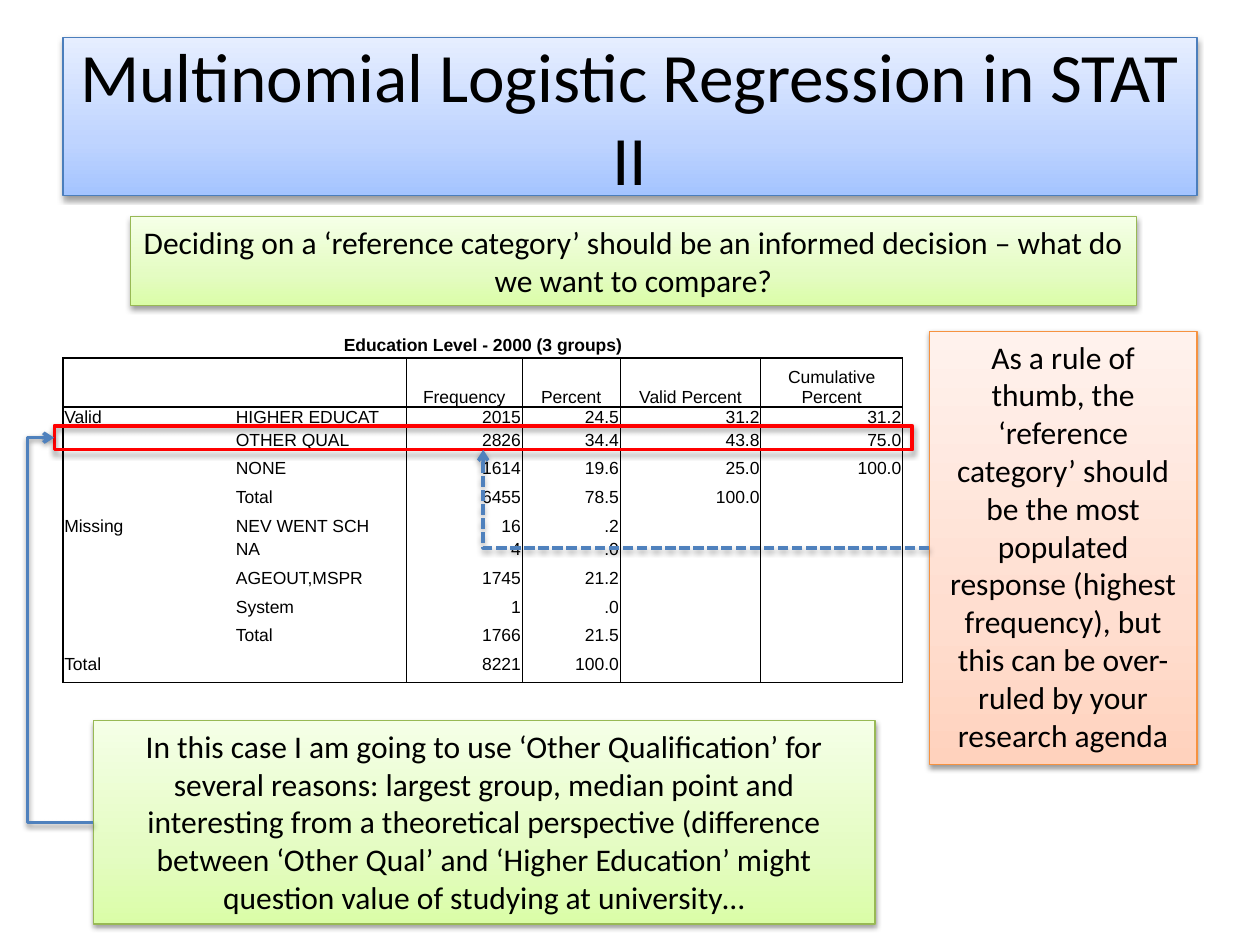
from copy import deepcopy

from lxml.etree import SubElement
from pptx import Presentation
from pptx.dml.color import RGBColor
from pptx.enum.dml import MSO_LINE
from pptx.enum.shapes import MSO_CONNECTOR, MSO_SHAPE
from pptx.enum.text import MSO_ANCHOR, PP_ALIGN
from pptx.oxml.ns import qn
from pptx.util import Pt

BLUE = ("A4C4FF", "BFD4FF", "E6EEFF", "4B7EBC")
GREEN = ("DAFDA7", "E4FCC2", "F5FFE7", "98B955")
ORANGE = ("FFD2BD", "FFDED0", "FFF2ED", "F69240")
STOPS = (0, 0.35, 1)

# text, (left, top, width, height), palette, font size, anchor
BOXES = [
    ("Multinomial Logistic Regression in STAT II",
     (36, 21.6, 648, 90), BLUE, 39.6, MSO_ANCHOR.MIDDLE),
    ("Deciding on a ‘reference category’ should be an informed decision – "
     "what do we want to compare?",
     (74.6, 123.9, 574.8, 50.9), GREEN, 18, MSO_ANCHOR.TOP),
    ("As a rule of thumb, the ‘reference category’ should be the most populated "
     "response (highest frequency), but this can be over-ruled by your research agenda",
     (531, 189.4, 153, 247.4), ORANGE, 18, MSO_ANCHOR.TOP),
    ("In this case I am going to use ‘Other Qualification’ for several reasons: "
     "largest group, median point and interesting from a theoretical perspective "
     "(difference between ‘Other Qual’ and ‘Higher Education’ might question value "
     "of studying at university…",
     (53.3, 411.8, 446.7, 116.3), GREEN, 18, MSO_ANCHOR.TOP),
]

ROWS = [
    ("Education Level - 2000 (3 groups)", "", "", "", "", ""),
    ("", "", "Frequency", "Percent", "Valid Percent", "Cumulative Percent"),
    ("Valid", "HIGHER EDUCAT", "2015", "24.5", "31.2", "31.2"),
    ("", "OTHER QUAL", "2826", "34.4", "43.8", "75.0"),
    ("", "NONE", "1614", "19.6", "25.0", "100.0"),
    ("", "Total", "6455", "78.5", "100.0", ""),
    ("Missing", "NEV WENT SCH", "16", ".2", "", ""),
    ("", "NA", "4", ".0", "", ""),
    ("", "AGEOUT,MSPR", "1745", "21.2", "", ""),
    ("", "System", "1", ".0", "", ""),
    ("", "Total", "1766", "21.5", "", ""),
    ("Total", "", "8221", "100.0", "", ""),
]
COL_WIDTHS = (98.1, 98.1, 66.2, 56, 80.4, 81)
TITLE_ROW, HEADER_ROW, LAST_ROW = 0, 1, len(ROWS) - 1
TITLE_HEIGHT, HEADER_HEIGHT, TIGHT_HEIGHT, ROW_HEIGHT = 15.1, 28, 12.7, 16.5
TIGHT_ROWS = (2, 6)
MERGES = [((0, 0), (0, 5)), ((1, 0), (1, 1)), ((2, 0), (5, 0)),
          ((6, 0), (10, 0)), ((11, 0), (11, 1))]
TABLE_LEFT, TABLE_TOP = 36, 189.4
HIGHLIGHT = (31, 243.3, 490.3, 13.7)


def rgb(color):
    return RGBColor.from_string(color)


def add_shadow(shape, blur=3.15, dist=1.57, alpha=38):
    """Drop a black shadow straight down; call after fill and line are set."""
    effects = SubElement(shape._element.spPr, qn("a:effectLst"))
    outer = SubElement(effects, qn("a:outerShdw"), blurRad=str(Pt(blur)),
                       dist=str(Pt(dist)), dir="5400000", rotWithShape="0")
    black = SubElement(outer, qn("a:srgbClr"), val="000000")
    SubElement(black, qn("a:alpha"), val=str(alpha * 1000))


def set_line(line, color, width):
    line.color.rgb = rgb(color)
    line.width = Pt(width)


def add_rect(shapes, box):
    return shapes.add_shape(MSO_SHAPE.RECTANGLE, *map(Pt, box))


def write(tf, text, align, **font):
    p = tf.paragraphs[0]
    p.alignment = align
    r = p.add_run()
    r.text = text
    r.font.color.rgb = rgb("000000")
    for name, value in font.items():
        setattr(r.font, name, value)


def add_box(shapes, text, box, palette, size, anchor):
    s = add_rect(shapes, box)
    s.fill.gradient()
    s.fill.gradient_angle = 90
    stops = s._element.spPr.find(".//" + qn("a:gsLst"))
    stops.append(deepcopy(stops[-1]))
    for stop, position, color in zip(s.fill.gradient_stops, STOPS, palette):
        stop.position = position
        stop.color.rgb = rgb(color)
    set_line(s.line, palette[-1], 0.75)
    add_shadow(s)
    s.text_frame.word_wrap = True
    s.text_frame.vertical_anchor = anchor
    write(s.text_frame, text, PP_ALIGN.CENTER, name="Calibri", size=Pt(size))
    return s


def row_height(row):
    special = {TITLE_ROW: TITLE_HEIGHT, HEADER_ROW: HEADER_HEIGHT}
    return special.get(row, TIGHT_HEIGHT if row in TIGHT_ROWS else ROW_HEIGHT)


def column_line(row, boundary):
    """Width of the vertical rule at a column boundary; 0 for none."""
    if row == TITLE_ROW or boundary == 1:
        return 0
    return 1 if boundary in (0, 2, len(COL_WIDTHS)) else 0.5


def row_line(boundary):
    return 1 if boundary in (HEADER_ROW, HEADER_ROW + 1, len(ROWS)) else 0


def set_borders(cell, row, col):
    widths = {"a:lnL": column_line(row, col), "a:lnR": column_line(row, col + 1),
              "a:lnT": row_line(row), "a:lnB": row_line(row + 1)}
    tc_pr = cell._tc.get_or_add_tcPr()
    for tag, width in widths.items():
        ln = SubElement(tc_pr, qn(tag), w=str(Pt(width)))
        if width:
            fill = SubElement(ln, qn("a:solidFill"))
            SubElement(fill, qn("a:srgbClr"), val="000000")
        else:
            SubElement(ln, qn("a:noFill"))


def fill_cell(cell, text, row, col):
    cell.margin_left = cell.margin_right = cell.margin_top = Pt(0.75)
    cell.margin_bottom = 0
    cell.vertical_anchor = {TITLE_ROW: MSO_ANCHOR.MIDDLE,
                            HEADER_ROW: MSO_ANCHOR.BOTTOM}.get(row, MSO_ANCHOR.TOP)
    align = PP_ALIGN.RIGHT if col > 1 else PP_ALIGN.LEFT
    if row <= HEADER_ROW:
        align = PP_ALIGN.CENTER
    if text:
        write(cell.text_frame, text, align, name="Arial", size=Pt(10),
              bold=row == TITLE_ROW)
    else:
        SubElement(cell.text_frame.paragraphs[0]._p, qn("a:endParaRPr"), sz="1000")
    set_borders(cell, row, col)
    cell.fill.background()


def add_frequency_table(shapes):
    heights = [row_height(i) for i in range(len(ROWS))]
    table = shapes.add_table(len(ROWS), len(COL_WIDTHS), Pt(TABLE_LEFT), Pt(TABLE_TOP),
                             Pt(sum(COL_WIDTHS)), Pt(sum(heights))).table
    table.first_row = table.horz_banding = False
    for column, width in zip(table.columns, COL_WIDTHS):
        column.width = Pt(width)
    for i, (values, height) in enumerate(zip(ROWS, heights)):
        table.rows[i].height = Pt(height)
        for j, text in enumerate(values):
            fill_cell(table.cell(i, j), text, i, j)
    for first, last in MERGES:
        table.cell(*first).merge(table.cell(*last))


def add_elbow(shapes, start, end, preset, dash=None, bend=None):
    c = shapes.add_connector(MSO_CONNECTOR.ELBOW, *map(Pt, start + end))
    set_line(c.line, "4F81BD", 2)
    c.line.dash_style = dash
    SubElement(c.line._get_or_add_ln(), qn("a:tailEnd"), type="arrow")
    geometry = c._element.spPr.find(qn("a:prstGeom"))
    geometry.set("prst", preset)
    if bend:
        SubElement(geometry.find(qn("a:avLst")), qn("a:gd"),
                   name="adj1", fmla=f"val {round(bend * 100000)}")
    add_shadow(c)


def main():
    prs = Presentation()
    prs.slide_width, prs.slide_height = Pt(720), Pt(540)
    shapes = prs.slides.add_slide(prs.slide_layouts[6]).shapes

    add_box(shapes, *BOXES[0])
    add_frequency_table(shapes)
    for box in BOXES[1:]:
        add_box(shapes, *box)

    highlight = add_rect(shapes, HIGHLIGHT)
    highlight.fill.background()
    set_line(highlight.line, "FF0000", 2)
    add_shadow(highlight, dist=1.8, alpha=35)

    left, top, width, height = HIGHLIGHT
    rule_box, reason_box = BOXES[2][1], BOXES[3][1]
    add_elbow(shapes, (rule_box[0], rule_box[1] + rule_box[3] / 2),
              (left + width / 2, top + height), "bentConnector2", MSO_LINE.SQUARE_DOT)
    add_elbow(shapes, (reason_box[0], reason_box[1] + reason_box[3] / 2),
              (left, top + height / 2), "bentConnector3", bend=1.68)
    prs.save("out.pptx")


if __name__ == "__main__":
    main()
